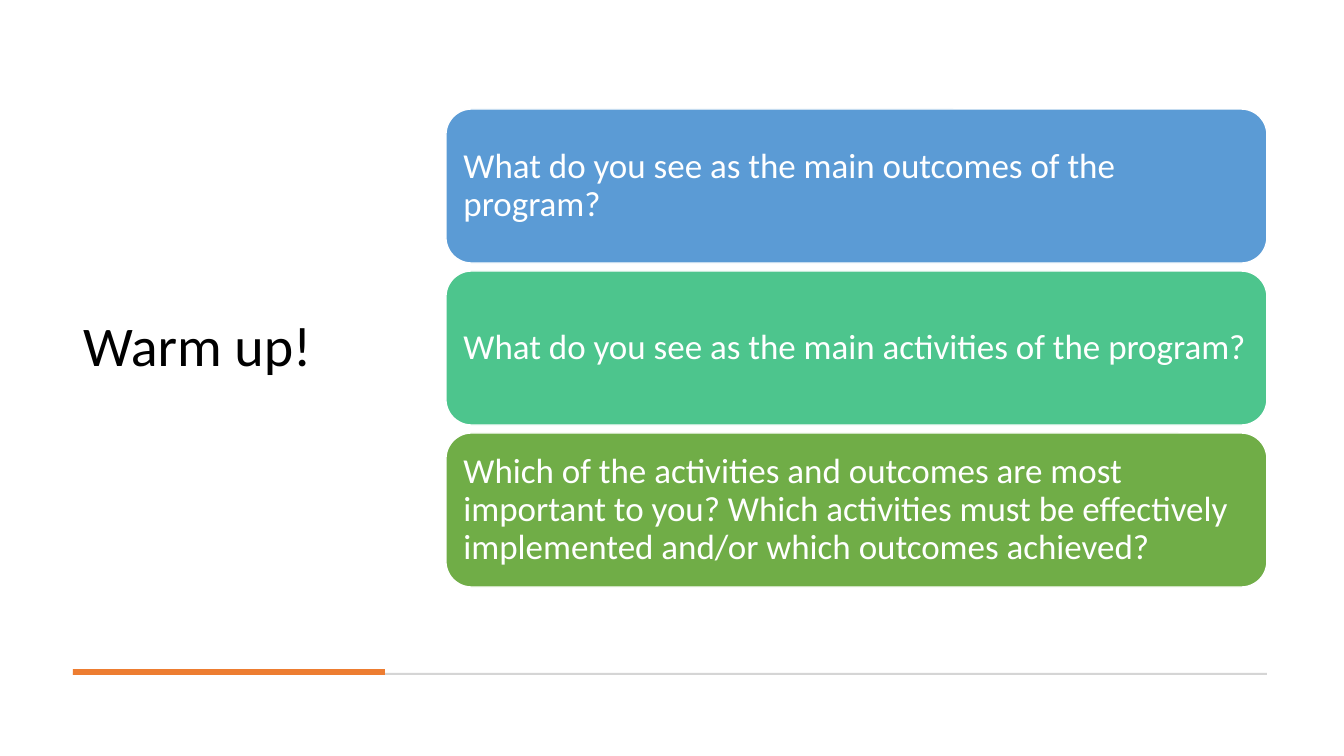
"""Build the warm-up slide with three question cards."""
import dataclasses

import pptx
import pptx.dml.color
import pptx.enum.shapes
import pptx.enum.text
import pptx.util

SCALE = 914400 / 100.8
KINDS = pptx.enum.shapes.MSO_SHAPE
LEFT, WIDTH = 73, 1194
CARD_X, CARD_Y, CARD_W, CARD_H, STEP = 446, 109, 821, 154, 162


@dataclasses.dataclass(frozen=True)
class Theme:
    """Hold the font, type sizes and colours."""
    font: str = "Calibri"
    title: int = 40
    body: int = 25
    dark: str = "000000"
    light: str = "FFFFFF"
    rule: str = "D5D5D5"
    accent: str = "ED7D31"
    cards: tuple = ("5B9BD5", "4DC58D", "70AD47")


THEME = Theme()
ASKS = (
    "What do you see as the main outcomes of the program?",
    "What do you see as the main activities of the program?",
    "Which of the activities and outcomes are most important to you? "
    "Which activities must be effectively implemented and/or which "
    "outcomes achieved?",
)


def px(count):
    """Turn pixels into EMU."""
    return pptx.util.Emu(round(count * SCALE))


def rgb(code):
    """Turn a hex code into a colour."""
    return pptx.dml.color.RGBColor.from_string(code)


def write(shape, text, size, color):
    """Set left-aligned, middle-anchored text in a shape."""
    frame = shape.text_frame
    frame.text = text
    frame.word_wrap = True
    frame.auto_size = pptx.enum.text.MSO_AUTO_SIZE.NONE
    frame.vertical_anchor = pptx.enum.text.MSO_ANCHOR.MIDDLE
    para = frame.paragraphs[0]
    para.alignment = pptx.enum.text.PP_ALIGN.LEFT
    para.line_spacing = 0.9
    font = para.runs[0].font
    font.name = THEME.font
    font.size = pptx.util.Pt(size)
    font.color.rgb = rgb(color)


def add_block(slide, kind, box, color):
    """Add a filled shape with neither line nor shadow."""
    block = slide.shapes.add_shape(kind, *map(px, box))
    block.shadow.inherit = False
    block.fill.solid()
    block.fill.fore_color.rgb = rgb(color)
    block.line.fill.background()
    return block


def add_card(slide, row, text, color):
    """Add one question card in its row."""
    box = (CARD_X, CARD_Y + row * STEP, CARD_W, CARD_H)
    card = add_block(slide, KINDS.ROUNDED_RECTANGLE, box, color)
    card.line.color.rgb = rgb(THEME.light)
    card.line.width = pptx.util.Pt(1)
    frame = card.text_frame
    frame.margin_left = frame.margin_right = px(10)
    frame.margin_top = frame.margin_bottom = px(10)
    write(card, text, THEME.body, THEME.light)


def set_title(slide, text):
    """Place and format the slide title."""
    title = slide.shapes.title
    title.left, title.top, title.width, title.height = map(
        px, (LEFT, 47, 312, 602))
    write(title, text, THEME.title, THEME.dark)


def main():
    """Build and save the slide."""
    deck = pptx.Presentation()
    deck.slide_width, deck.slide_height = px(1344), px(756)
    slide = deck.slides.add_slide(deck.slide_layouts[5])
    set_title(slide, "Warm up!")
    add_block(slide, KINDS.RECTANGLE, (LEFT, 673, WIDTH, 2), THEME.rule)
    add_block(slide, KINDS.RECTANGLE, (LEFT, 669, 312, 6), THEME.accent)
    for row, (text, color) in enumerate(zip(ASKS, THEME.cards)):
        add_card(slide, row, text, color)
    deck.save("out.pptx")


if __name__ == "__main__":
    main()
